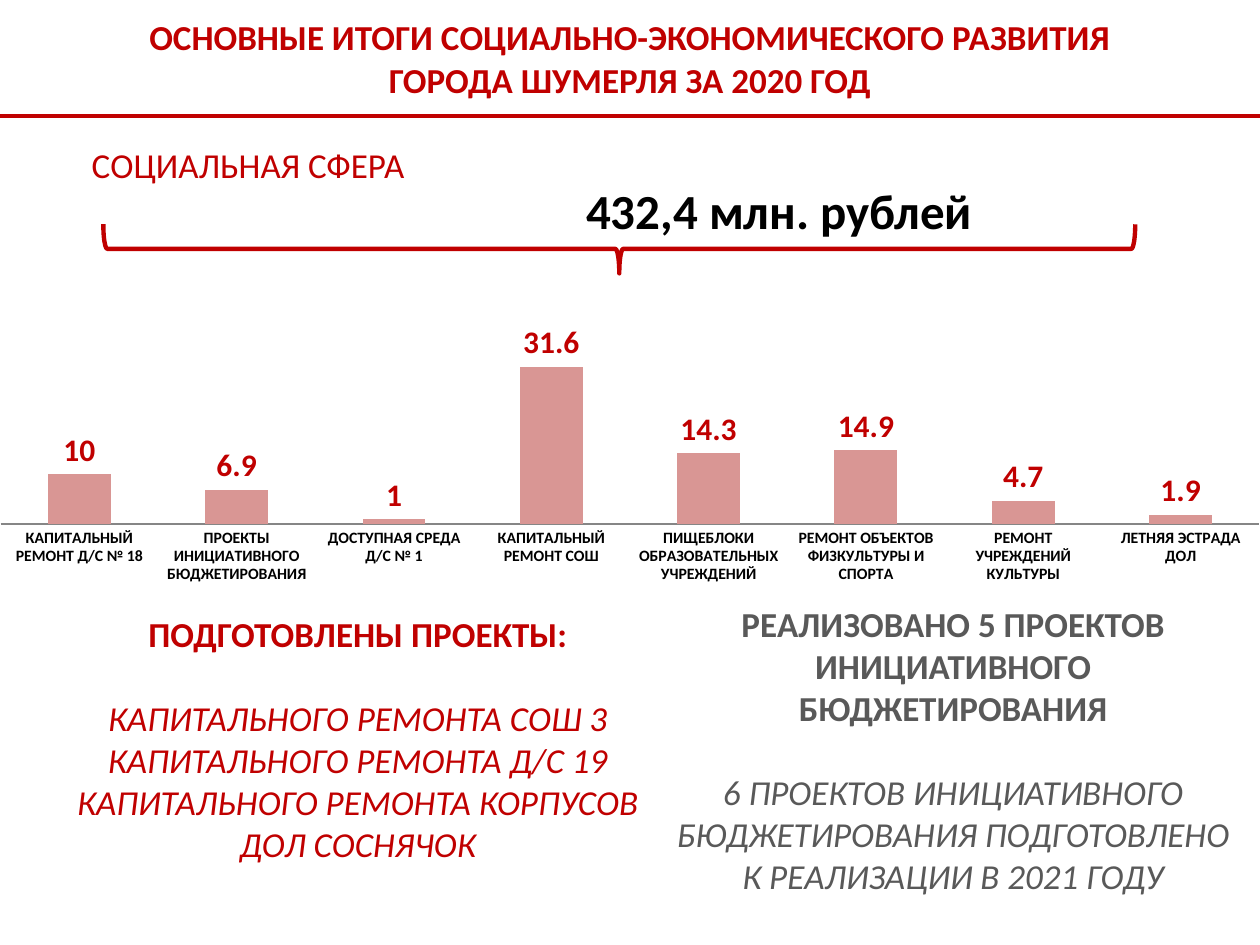
from dataclasses import dataclass

from lxml import etree
from pptx import Presentation
from pptx import util as u
from pptx.chart import data as chart_data
from pptx.dml import color
from pptx.enum import chart as charts, shapes, text
from pptx.oxml import ns

FONT = "Calibri"
RED, PINK, GREY, BLACK, AXIS = "C00000", "D99694", "595959", "000000", "868686"
RULE_TOP = 0.92
LINE_HEIGHT = 24


@dataclass
class Line:
    wording: str
    bold: bool = False
    italic: bool = False
    gap: float = 0


@dataclass
class Block:
    left: float
    top: float
    width: float
    height: float
    hue: str
    lines: list[Line]
    size: float = 20
    bottom_inset: float = 0.05


BLOCKS = [
    Block(0, 0, 10, RULE_TOP, RED, [
        Line("ОСНОВНЫЕ ИТОГИ СОЦИАЛЬНО-ЭКОНОМИЧЕСКОГО РАЗВИТИЯ", bold=True),
        Line("ГОРОДА ШУМЕРЛЯ ЗА 2020 ГОД", bold=True),
    ]),
    Block(0.2, 1.07, 3.54, 0.47, RED, [Line("СОЦИАЛЬНАЯ СФЕРА")]),
    Block(4.06, 1.39, 4.25, 0.55, BLACK, [Line("432,4 млн. рублей", bold=True)], size=28),
    Block(0.28, 4.85, 5.12, 2.36, RED, [
        Line("ПОДГОТОВЛЕНЫ ПРОЕКТЫ:", bold=True),
        Line("КАПИТАЛЬНОГО РЕМОНТА СОШ 3", italic=True, gap=LINE_HEIGHT),
        Line("КАПИТАЛЬНОГО РЕМОНТА Д/С 19", italic=True),
        Line("КАПИТАЛЬНОГО РЕМОНТА КОРПУСОВ ДОЛ СОСНЯЧОК", italic=True),
    ], bottom_inset=0.38),
    Block(5.24, 4.77, 4.65, 2.36, GREY, [
        Line("РЕАЛИЗОВАНО 5 ПРОЕКТОВ ИНИЦИАТИВНОГО БЮДЖЕТИРОВАНИЯ", bold=True),
        Line("6 ПРОЕКТОВ ИНИЦИАТИВНОГО БЮДЖЕТИРОВАНИЯ ПОДГОТОВЛЕНО К РЕАЛИЗАЦИИ В 2021 ГОДУ",
             italic=True, gap=LINE_HEIGHT),
    ]),
]

COSTS = {
    "КАПИТАЛЬНЫЙ РЕМОНТ Д/С № 18": 10,
    "ПРОЕКТЫ ИНИЦИАТИВНОГО БЮДЖЕТИРОВАНИЯ": 6.9,
    "ДОСТУПНАЯ СРЕДА Д/С № 1": 1,
    "КАПИТАЛЬНЫЙ РЕМОНТ СОШ": 31.6,
    "ПИЩЕБЛОКИ ОБРАЗОВАТЕЛЬНЫХ УЧРЕЖДЕНИЙ": 14.3,
    "РЕМОНТ ОБЪЕКТОВ ФИЗКУЛЬТУРЫ И СПОРТА": 14.9,
    "РЕМОНТ УЧРЕЖДЕНИЙ КУЛЬТУРЫ": 4.7,
    "ЛЕТНЯЯ ЭСТРАДА ДОЛ": 1.9,
}


def rgb(hue: str) -> color.RGBColor:
    return color.RGBColor.from_string(hue)


def style_font(font, size: float, hue: str, bold: bool = False, italic: bool = False) -> None:
    font.name, font.size = FONT, u.Pt(size)
    font.bold, font.italic = bold, italic
    font.color.rgb = rgb(hue)


def style_line(outline, hue: str, width: float) -> None:
    outline.color.rgb = rgb(hue)
    outline.width = u.Pt(width)


def draw_block(slide, block: Block) -> None:
    frame = slide.shapes.add_textbox(
        *map(u.Inches, (block.left, block.top, block.width, block.height))).text_frame
    frame.word_wrap = True
    frame.vertical_anchor = text.MSO_ANCHOR.MIDDLE
    frame.margin_bottom = u.Inches(block.bottom_inset)
    frame.text = "\n".join(line.wording for line in block.lines)
    for paragraph, line in zip(frame.paragraphs, block.lines):
        paragraph.alignment = text.PP_ALIGN.CENTER
        paragraph.space_before = u.Pt(line.gap)
        for run in paragraph.runs:
            style_font(run.font, block.size, block.hue, line.bold, line.italic)


def draw_rule(slide) -> None:
    rule = slide.shapes.add_connector(
        shapes.MSO_CONNECTOR.STRAIGHT,
        *map(u.Inches, (0, RULE_TOP, 10, RULE_TOP)))
    style_line(rule.line, RED, 2.5)
    etree.SubElement(rule.element.spPr, ns.qn("a:effectLst"))


def draw_brace(slide) -> None:
    brace = slide.shapes.add_shape(
        shapes.MSO_SHAPE.RIGHT_BRACE, *map(u.Inches, (4.72, -2.12, 0.39, 8.19)))
    brace.rotation = 90
    brace.adjustments[0], brace.adjustments[1] = 0.08, 0.5
    brace.shadow.inherit = False
    brace.fill.background()
    style_line(brace.line, RED, 2.5)


def set_plot_layout(chart, bounds: dict[str, float]) -> None:
    plot_area = chart.element.find(".//" + ns.qn("c:plotArea"))
    for old_layout in plot_area.findall(ns.qn("c:layout")):
        plot_area.remove(old_layout)
    layout = etree.Element(ns.qn("c:layout"))
    manual = etree.SubElement(layout, ns.qn("c:manualLayout"))
    settings = {"layoutTarget": "inner", "xMode": "edge", "yMode": "edge", **bounds}
    for tag, value in settings.items():
        etree.SubElement(manual, ns.qn(f"c:{tag}")).set("val", str(value))
    plot_area.insert(0, layout)


def draw_costs(slide) -> None:
    costs = chart_data.CategoryChartData()
    costs.categories = list(COSTS)
    costs.add_series("Series 1", list(COSTS.values()))
    chart = slide.shapes.add_chart(
        charts.XL_CHART_TYPE.COLUMN_CLUSTERED,
        *map(u.Inches, (0, 2.57, 10, 2.6)), costs).chart
    style_font(chart.font, 10, BLACK)
    chart.has_legend = chart.has_title = False
    set_plot_layout(chart, {"x": 0, "y": 0, "w": 1, "h": 0.61})

    projects = chart.category_axis
    projects.major_tick_mark = charts.XL_TICK_MARK.NONE
    style_font(projects.tick_labels.font, 9, BLACK, bold=True)
    style_line(projects.format.line, AXIS, 0.75)

    millions = chart.value_axis
    millions.minimum_scale, millions.maximum_scale = 0, 40
    millions.has_major_gridlines = False
    millions.visible = False

    columns = chart.plots[0]
    columns.vary_by_categories = False
    columns.gap_width, columns.overlap = 150, -25
    bars = columns.series[0]
    bars.format.fill.solid()
    bars.format.fill.fore_color.rgb = rgb(PINK)
    bars.data_labels.show_value = True
    bars.data_labels.position = charts.XL_LABEL_POSITION.OUTSIDE_END
    style_font(bars.data_labels.font, 18, RED, bold=True)


def main() -> None:
    deck = Presentation()
    deck.slide_width, deck.slide_height = u.Inches(10), u.Inches(7.5)
    slide = deck.slides.add_slide(deck.slide_layouts[6])
    draw_rule(slide)
    draw_brace(slide)
    draw_costs(slide)
    for block in BLOCKS:
        draw_block(slide, block)
    deck.save("out.pptx")


if __name__ == "__main__":
    main()
